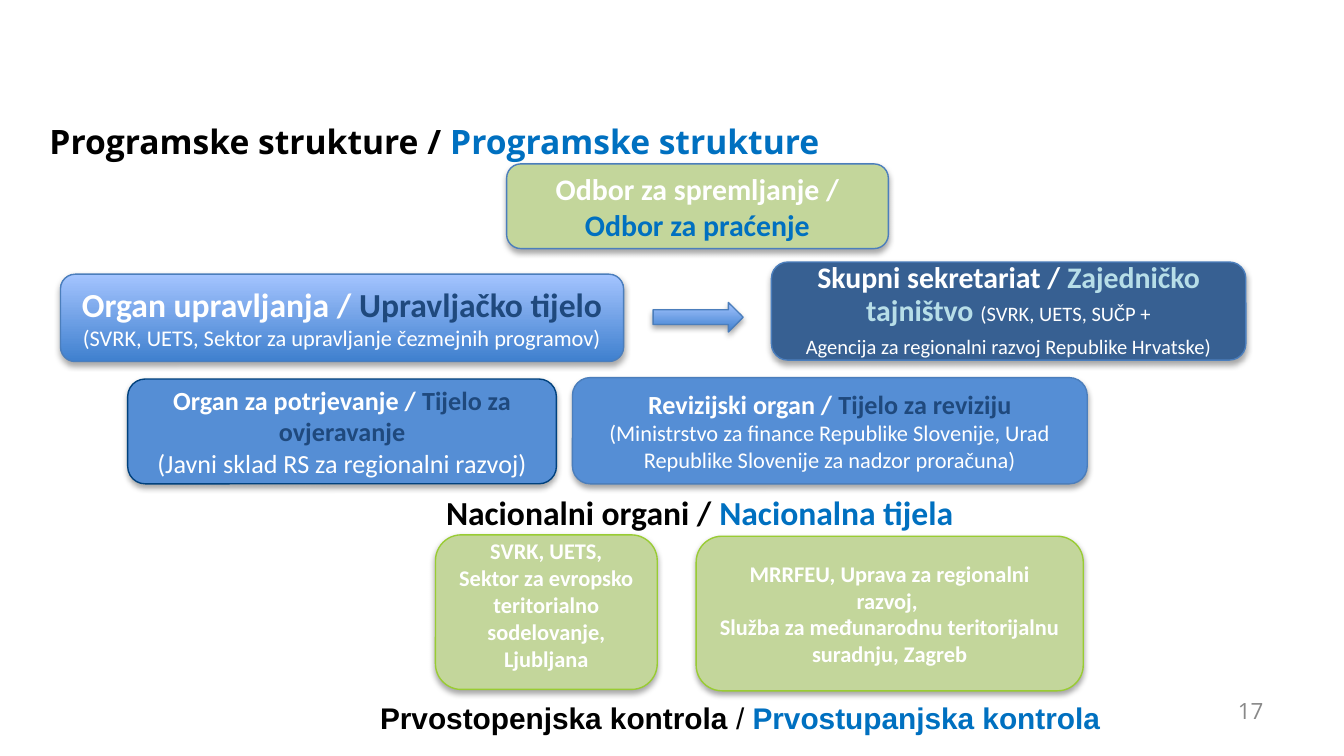
from pptx import Presentation
from pptx.dml.color import RGBColor
from pptx.enum.shapes import MSO_SHAPE
from pptx.enum.text import MSO_ANCHOR, PP_ALIGN
from pptx.util import Inches, Pt

ROUNDED = MSO_SHAPE.ROUNDED_RECTANGLE
ARROW = MSO_SHAPE.RIGHT_ARROW
TOP, MIDDLE = MSO_ANCHOR.TOP, MSO_ANCHOR.MIDDLE
LEFT, CENTER, RIGHT = PP_ALIGN.LEFT, PP_ALIGN.CENTER, PP_ALIGN.RIGHT

BLACK = RGBColor(0x00, 0x00, 0x00)
WHITE = RGBColor(0xFF, 0xFF, 0xFF)
GRAY = RGBColor(0x89, 0x89, 0x89)
CROATIAN_BLUE = RGBColor(0x00, 0x70, 0xC0)
NAVY = RGBColor(0x1F, 0x49, 0x7D)
PALE_BLUE = RGBColor(0xB7, 0xDE, 0xE8)
MID_BLUE = RGBColor(0x55, 0x8E, 0xD5)
DARK_BLUE = RGBColor(0x37, 0x60, 0x92)
GREEN = RGBColor(0xC3, 0xD6, 0x9B)
GRADIENT_BOTTOM = RGBColor(0x3F, 0x80, 0xCE)
GRADIENT_TOP = RGBColor(0xA4, 0xC4, 0xFF)
BLUE_LINE = RGBColor(0x4B, 0x7E, 0xBC)
NAVY_LINE = RGBColor(0x00, 0x41, 0x7D)
GREEN_LINE = RGBColor(0x99, 0xCC, 0x33)


def write_text(shape, paragraphs, font_name, alignment, anchor):
    """Fill a shape with paragraphs, each a list of (text, size, color, bold) runs."""
    text_frame = shape.text_frame
    text_frame.word_wrap = True
    text_frame.vertical_anchor = anchor
    text_frame.text = "\n".join("" for _ in paragraphs)
    for paragraph, runs in zip(text_frame.paragraphs, paragraphs):
        paragraph.alignment = alignment
        for text, size, color, bold in runs:
            run = paragraph.add_run()
            run.text = text
            run.font.name = font_name
            run.font.size = Pt(size)
            run.font.color.rgb = color
            run.font.bold = bold


def add_block(kind, position, fill_color, line_color):
    """Add an outlined shape with the theme shadow; no fill color means the blue gradient."""
    shape = slide.shapes.add_shape(kind, *map(Inches, position))
    if fill_color is None:
        shape.fill.gradient()
        shape.fill.gradient_angle = 90
        for stop, color in zip(shape.fill.gradient_stops, (GRADIENT_BOTTOM, GRADIENT_TOP)):
            stop.color.rgb = color
    else:
        shape.fill.solid()
        shape.fill.fore_color.rgb = fill_color
    shape.line.color.rgb = line_color
    shape.line.width = Pt(0.75)
    return shape


presentation = Presentation()
presentation.slide_width = Inches(10)
presentation.slide_height = Inches(10) * 9 // 16
slide = presentation.slides.add_slide(presentation.slide_layouts[6])

# Headings and slide number
labels = [
    ((0.27, 0.58, 9, 0.94), "Open Sans", LEFT, MIDDLE,
     [("Programske strukture / ", 18, BLACK, True),
      ("Programske strukture", 18, CROATIAN_BLUE, True)]),
    ((7.17, 5.14, 2.33, 0.3), "Open Sans", RIGHT, MIDDLE,
     [("17", 12, GRAY, False)]),
    ((3.22, 3.61, 4.61, 0.4), "Calibri", LEFT, TOP,
     [("Nacionalni organi / ", 18, BLACK, True),
      ("Nacionalna tijela", 18, CROATIAN_BLUE, True)]),
    ((2.73, 5.16, 5.86, 0.37), "Arial", LEFT, TOP,
     [("Prvostopenjska kontrola ", 16, BLACK, True),
      ("/ ", 16, BLACK, False),
      ("Prvostupanjska kontrola", 16, CROATIAN_BLUE, True)]),
]
for position, font_name, alignment, anchor, runs in labels:
    label = slide.shapes.add_textbox(*map(Inches, position))
    write_text(label, [runs], font_name, alignment, anchor)

# Programme bodies
bodies = {
    "managing authority": ((0.45, 2.04, 4.19, 0.65), None, BLUE_LINE, [
        [("Organ upravljanja / ", 18, WHITE, True),
         ("Upravljačko tijelo", 18, NAVY, True)],
        [("(SVRK, UETS, Sektor za upravljanje čezmejnih programov)", 12, WHITE, False)]]),
    "certifying authority": ((0.95, 2.82, 3.19, 0.78), MID_BLUE, NAVY_LINE, [
        [("Organ za potrjevanje / ", 14, WHITE, True),
         ("Tijelo za ovjeravanje", 14, NAVY, True)],
        [("(Javni sklad RS za regionalni razvoj)", 14, WHITE, False)]]),
    "audit authority": ((4.26, 2.81, 3.83, 0.79), MID_BLUE, BLUE_LINE, [
        [("Revizijski organ / ", 14, WHITE, True),
         ("Tijelo za reviziju", 14, NAVY, True)],
        [("(Ministrstvo za finance Republike Slovenije, Urad Republike Slovenije "
          "za nadzor proračuna)", 12, WHITE, False)]]),
    "joint secretariat": ((5.74, 1.95, 3.53, 0.73), DARK_BLUE, BLUE_LINE, [
        [("Skupni sekretariat / ", 16, WHITE, True),
         ("Zajedničko tajništvo ", 16, PALE_BLUE, True),
         ("(SVRK, UETS, SUČP +", 11, WHITE, False)],
        [("Agencija za regionalni razvoj Republike Hrvatske)", 11, WHITE, False)]]),
    "Slovenian authority": ((3.24, 3.98, 1.65, 1.15), GREEN, GREEN_LINE, [
        [("SVRK, UETS,", 12, WHITE, True)],
        [("Sektor za evropsko teritorialno sodelovanje,", 12, WHITE, True)],
        [("Ljubljana", 12, WHITE, True)]]),
    "Croatian authority": ((5.18, 3.99, 2.88, 1.15), GREEN, GREEN_LINE, [
        [("MRRFEU, Uprava za regionalni razvoj, ", 12, WHITE, True)],
        [("Služba za međunarodnu teritorijalnu suradnju, Zagreb", 12, WHITE, True)]]),
    "monitoring committee": ((3.77, 1.22, 2.84, 0.63), GREEN, BLUE_LINE, [
        [("Odbor za spremljanje / ", 16, WHITE, True),
         ("Odbor za praćenje", 16, CROATIAN_BLUE, True)]]),
}
boxes = {}
for name, (position, fill_color, line_color, paragraphs) in bodies.items():
    boxes[name] = add_block(ROUNDED, position, fill_color, line_color)
    write_text(boxes[name], paragraphs, "Calibri", CENTER, MIDDLE)

for paragraph in boxes["joint secretariat"].text_frame.paragraphs:
    paragraph.line_spacing = 0.9
    paragraph.space_after = Pt(5)
boxes["Slovenian authority"].text_frame.margin_bottom = Inches(0.16)

add_block(ARROW, (4.86, 2.25, 0.67, 0.22), None, BLUE_LINE)

presentation.save("out.pptx")
